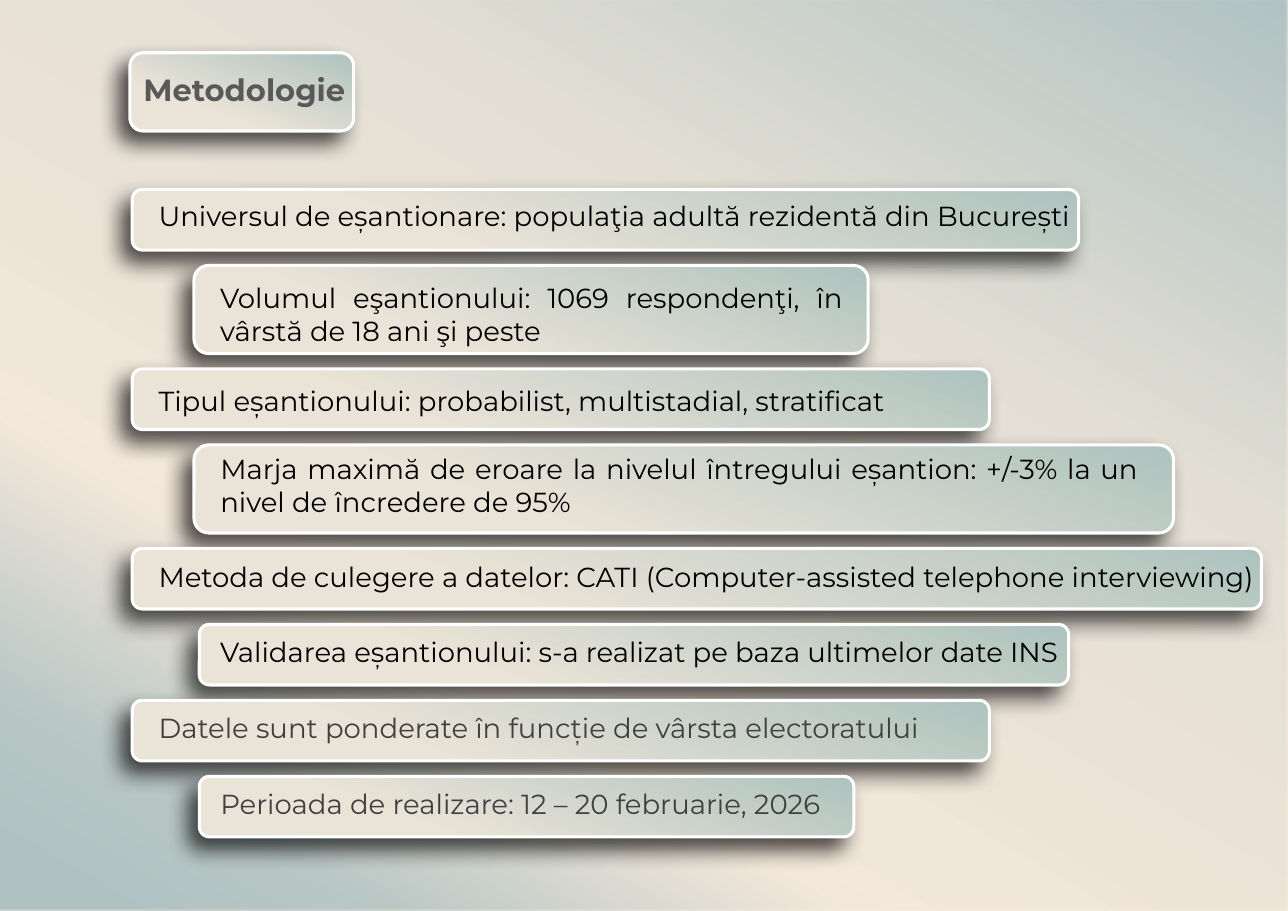
from pptx import Presentation
from pptx.dml.color import RGBColor
from pptx.enum.shapes import MSO_SHAPE
from pptx.enum.text import MSO_ANCHOR, MSO_AUTO_SIZE, PP_ALIGN
from pptx.oxml import parse_xml
from pptx.oxml.ns import nsdecls
from pptx.util import Inches, Pt

RECT, ROUND = MSO_SHAPE.RECTANGLE, MSO_SHAPE.ROUNDED_RECTANGLE
TOP, NO_FIT = MSO_ANCHOR.TOP, MSO_AUTO_SIZE.NONE
LEFT, JUSTIFY = PP_ALIGN.LEFT, PP_ALIGN.JUSTIFY

WIDTH, HEIGHT = Inches(11.69), Inches(8.27)
COL, ROW = WIDTH / 100, HEIGHT / 100
FONT = "Montserrat"
BLACK, GREY = "000000", "404040"
CORNER = 0.05
CARD_STOPS = [(0, "AEC3BE", 100), (69, "EAE3D7", 100)]
PAGE_STOPS = [(pos, "3F839B", alpha) for pos, alpha in
              [(0, 40), (33, 13), (50, 10), (70, 5), (86, 35), (95, 40)]]

SINGLE, DOUBLE, GAP = 6.65, 9.67, 1.69
TEXT_X = (12.32, 17.11)
CARDS = [
    (0, 10.27, 73.48, SINGLE, 1.09, 0, BLACK,
     "Universul de eșantionare: populaţia adultă rezidentă din București"),
    (1, 15.06, 52.35, DOUBLE, 1.69, 1.63, BLACK,
     "Volumul eşantionului: 1069 respondenţi, în vârstă de 18 ani şi peste"),
    (0, 10.27, 66.55, SINGLE, 1.69, 0, BLACK,
     "Tipul eșantionului: probabilist, multistadial, stratificat"),
    (1, 15.06, 76.05, DOUBLE, 0.73, 2.4, BLACK,
     "Marja maximă de eroare la nivelul întregului eșantion: +/-3% la un "
     "nivel de încredere de 95%"),
    (0, 10.27, 87.68, SINGLE, 1.33, 0, BLACK,
     "Metoda de culegere a datelor: CATI (Computer-assisted telephone interviewing)"),
    (1, 15.48, 67.49, SINGLE, 1.21, 0, BLACK,
     "Validarea eșantionului: s-a realizat pe baza ultimelor date INS"),
    (0, 10.27, 66.55, SINGLE, 1.21, 0, GREY,
     "Datele sunt ponderate în funcție de vârsta electoratului"),
    (1, 15.48, 50.81, SINGLE, 1.21, 0, GREY,
     "Perioada de realizare: 12 – 20 februarie, 2026"),
]


def color(hex_string):
    """Turn a hex string into a colour."""
    return RGBColor.from_string(hex_string)


def grid(x, y, w, h):
    """Convert columns and rows into a box in EMU."""
    return int(x * COL), int(y * ROW), int(w * COL), int(h * ROW)


def set_gradient(sp, stops, angle):
    """Fill a shape with a linear gradient of position, colour and opacity."""
    gs = "".join(
        f'<a:gs pos="{pos * 1000}"><a:srgbClr val="{rgb}">'
        f'<a:alpha val="{alpha * 1000}"/></a:srgbClr></a:gs>'
        for pos, rgb, alpha in stops)
    sp.element.spPr.insert(2, parse_xml(
        f'<a:gradFill {nsdecls("a")} rotWithShape="1"><a:gsLst>{gs}</a:gsLst>'
        f'<a:lin ang="{angle * 60000}" scaled="0"/></a:gradFill>'))


def set_shadow(sp):
    """Give a shape a soft shadow towards the lower left."""
    sp.shadow.inherit = False
    sp.element.spPr.find("{*}effectLst").append(parse_xml(
        f'<a:outerShdw {nsdecls("a")} blurRad="{Pt(14)}" dist="{Pt(10)}" '
        f'dir="{135 * 60000}" algn="tr" rotWithShape="0">'
        '<a:srgbClr val="000000"><a:alpha val="70000"/></a:srgbClr>'
        '</a:outerShdw>'))


def add_run(p, text, size, rgb, bold=False):
    """Add a formatted run to a paragraph."""
    r = p.add_run()
    r.text = text
    r.font.name, r.font.size, r.font.bold = FONT, Pt(size), bold
    r.font.color.rgb = color(rgb)


def add_page(slide):
    """Draw the tinted page background."""
    slide.background.fill.solid()
    slide.background.fill.fore_color.rgb = color("FEEEDE")
    sp = slide.shapes.add_shape(RECT, 0, 0, WIDTH, HEIGHT)
    sp.shadow.inherit = False
    sp.line.fill.background()
    set_gradient(sp, PAGE_STOPS, 120)


def add_card(slide, box):
    """Draw an empty rounded card in a grid box."""
    sp = slide.shapes.add_shape(ROUND, *grid(*box))
    set_gradient(sp, CARD_STOPS, 110)
    sp.line.color.rgb = color("FFFFFF")
    sp.line.width = Pt(2)
    set_shadow(sp)
    return sp


def add_title(slide, box):
    """Place the title placeholder over its card."""
    x, y, w, h = box
    add_card(slide, box)
    title = slide.shapes.title
    title.element.getparent().append(title.element)
    title.left, title.top, title.width, title.height = grid(
        x + 0.18, y + 1.82, w + 4.02, h - 3.03)
    tf = title.text_frame
    tf.auto_size, tf.vertical_anchor, tf.word_wrap = NO_FIT, TOP, True
    p = tf.paragraphs[0]
    p.alignment, p.line_spacing = LEFT, 0.9
    add_run(p, "Metodologie", 20, "595959", True)


def add_cards(slide, top):
    """Stack the method cards downwards from a grid row."""
    for level, x, w, h, drop, right, rgb, text in CARDS:
        sp = add_card(slide, (x, top, w, h))
        corner = CORNER * sp.height
        tf = sp.text_frame
        tf.word_wrap, tf.vertical_anchor = True, TOP
        tf.margin_left = int((TEXT_X[level] - x) * COL - corner)
        tf.margin_top = int(drop * ROW - corner)
        tf.margin_right, tf.margin_bottom = int(right * COL), 0
        p = tf.paragraphs[0]
        p.alignment = JUSTIFY if h == DOUBLE else LEFT
        add_run(p, text, 18, rgb)
        top += h + GAP


def main():
    """Build and save the presentation."""
    prs = Presentation()
    prs.slide_width, prs.slide_height = WIDTH, HEIGHT
    slide = prs.slides.add_slide(prs.slide_layouts[5])
    add_page(slide)
    add_cards(slide, 20.8)
    add_title(slide, (10.09, 5.8, 17.37, 8.59))
    prs.save("out.pptx")


if __name__ == "__main__":
    main()
